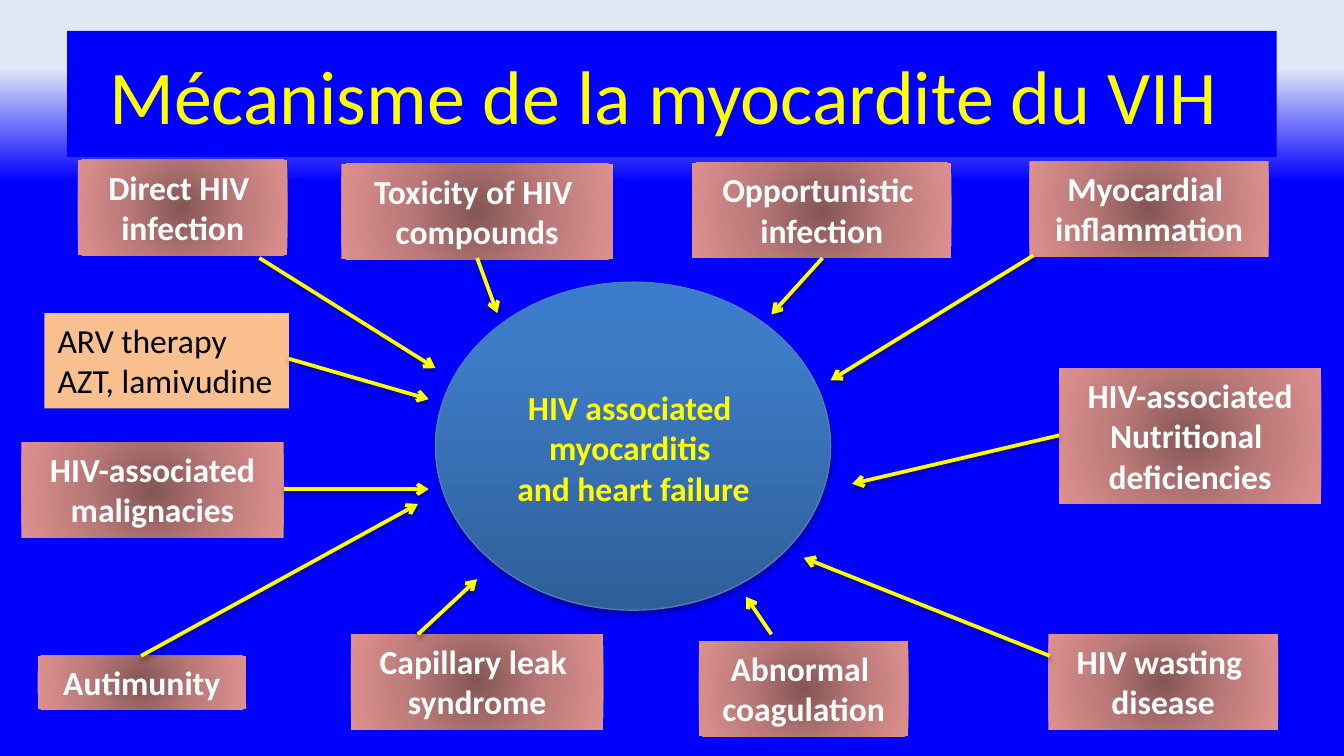
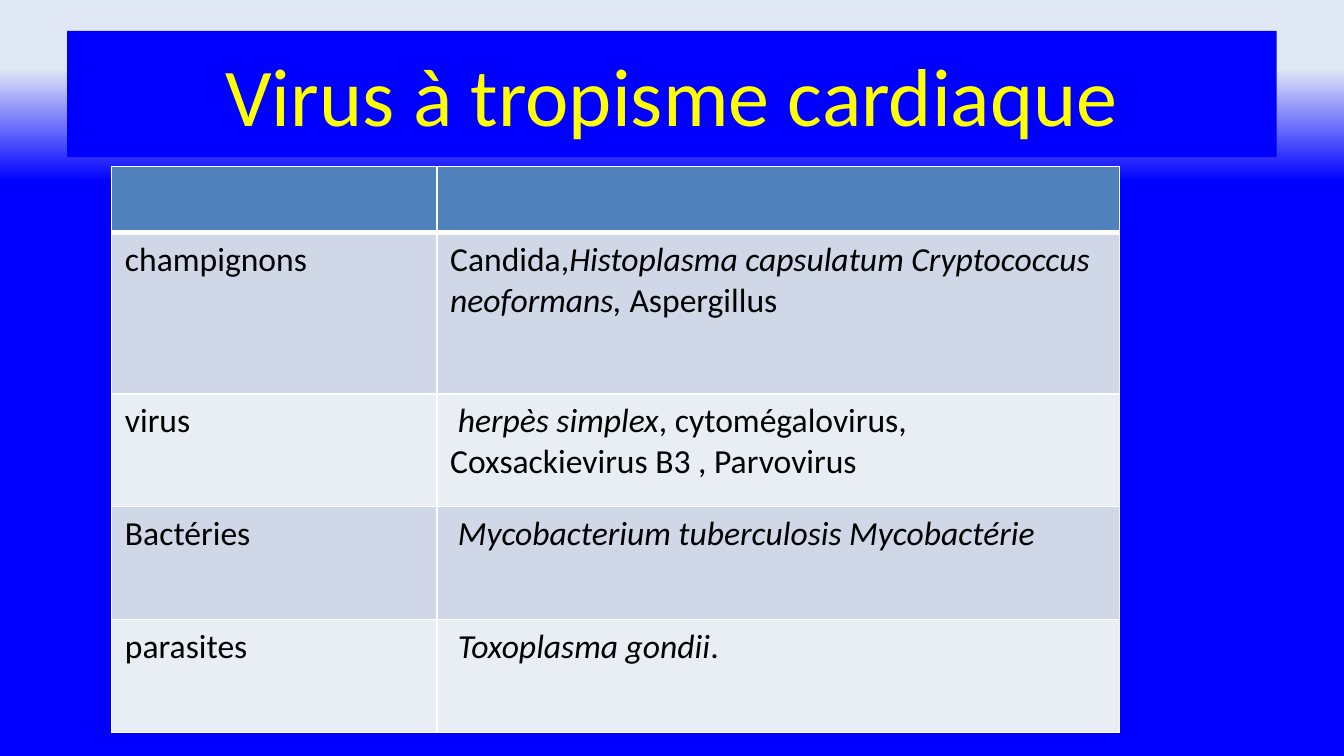
import pptx
import pptx.util
import pptx.oxml
import pptx.oxml.ns
import pptx.dml.color
import pptx.enum.shapes
import pptx.enum.text

RGB = pptx.dml.color.RGBColor
BLUE = RGB(0x00, 0x00, 0xFF)
PALE = RGB(0xE1, 0xE8, 0xF5)
GOLD = RGB(0xFF, 0xFF, 0x00)
WHITE = RGB(0xFF, 0xFF, 0xFF)
BLACK = RGB(0x00, 0x00, 0x00)
PEACH = RGB(0xFA, 0xC0, 0x90)
EDGE = RGB(0x4B, 0x7E, 0xBC)
HEAD = RGB(0x4F, 0x81, 0xBD)
BANDS = (RGB(0xE9, 0xED, 0xF4), RGB(0xD0, 0xD8, 0xE8))
SKY = ((9, PALE), (24, BLUE))
ROSE = ((0, RGB(0x84, 0x56, 0x55)), (50, RGB(0xBB, 0x7A, 0x79)), (100, RGB(0xDE, 0x91, 0x8F)))
STEEL = ((0, RGB(0x2F, 0x5F, 0x99)), (80, RGB(0x3D, 0x7C, 0xC7)), (100, RGB(0x3A, 0x7C, 0xCB)))

FONT = "Calibri"
SCALE = 9144
WIDE = 1000
TITLE = (50, 23, 900, 94)
CHART = (0, 100, 1000, 462)
GRID = (83, 124, 750, 421)

ALIGN = pptx.enum.text.PP_ALIGN
ANCHOR = pptx.enum.text.MSO_ANCHOR
NONE = pptx.enum.text.MSO_AUTO_SIZE.NONE
NS = pptx.oxml.ns.nsdecls("a")

HUB = (324, 110, 294, 244)
CORE = (370, 183, 203)
CORE_TEXT = "HIV associated \nmyocarditis \nand heart failure"
CAUSES = (
    ("HIV-associated\nNutritional \ndeficiencies", (788, 174, 195), (788, 224), (634, 260)),
    ("HIV-associated\nmalignacies", (16, 229, 195), (211, 264), (319, 264)),
    ("Autimunity", (28, 388, 155), (105, 388), (311, 275)),
    ("Capillary leak \nsyndrome", (261, 372, 188), (311, 372), (355, 331)),
    ("Abnormal \ncoagulation", (520, 377, 156), (574, 372), (555, 344)),
    ("HIV wasting \ndisease", (780, 372, 171), (781, 388), (598, 315)),
    ("Direct HIV \ninfection", (58, 19, 156), (193, 92), (324, 174)),
    ("Toxicity of HIV \ncompounds", (254, 22, 202), (355, 92), (370, 133)),
    ("Myocardial \ninflammation", (766, 20, 178), (769, 90), (618, 183)),
    ("Opportunistic \ninfection", (515, 21, 193), (612, 92), (574, 134)),
)
DRUG = ("ARV therapy\nAZT, lamivudine", (33, 133, 182), (215, 167), (319, 197))

COLS = (242, 508)
ROWS = (49, 120, 84, 84, 84)
GERMS = (
    ("", ""),
    ("champignons", "Candida,*Histoplasma capsulatum Cryptococcus neoformans, *Aspergillus "),
    ("virus", " *herpès simplex*, cytomégalovirus, Coxsackievirus B3 , Parvovirus"),
    ("Bactéries", " *Mycobacterium tuberculosis Mycobactérie"),
    ("parasites", " *Toxoplasma gondii*."),
)


def emu(*nums):
    return [pptx.util.Emu(n * SCALE) for n in nums]


def shift(box, x, y):
    return box[0] + x, box[1] + y


def blend(fill, root, stops, angle=None):
    fill.gradient()
    grad = root.find(".//" + pptx.oxml.ns.qn("a:gradFill"))
    marks = "".join(
        f'<a:gs pos="{pos * 1000}"><a:srgbClr val="{tone}"/></a:gs>' for pos, tone in stops)
    if angle is None:
        way = ('<a:path path="circle"><a:fillToRect l="50000" t="50000" '
               'r="50000" b="50000"/></a:path>')
    else:
        way = f'<a:lin ang="{angle * 60000}" scaled="0"/>'
    fresh = pptx.oxml.parse_xml(
        f'<a:gradFill {NS} rotWithShape="1"><a:gsLst>{marks}</a:gsLst>{way}</a:gradFill>')
    grad.getparent().replace(grad, fresh)


def shade(shape, alpha, dist):
    shape._element.spPr.append(pptx.oxml.parse_xml(
        f'<a:effectLst {NS}><a:outerShdw blurRad="{round(3.1 * 12700)}" '
        f'dist="{round(dist * 12700)}" dir="5400000" rotWithShape="0">'
        f'<a:srgbClr val="{BLACK}"><a:alpha val="{alpha * 1000}"/></a:srgbClr>'
        f'</a:outerShdw></a:effectLst>'))


def style(frame, size, tone, align, bold=False):
    for para in frame.paragraphs:
        para.alignment = align
        for run in para.runs:
            run.font.name = FONT
            run.font.size = pptx.util.Pt(size)
            run.font.bold = bold
            run.font.color.rgb = tone


def title(slide, box, text, size):
    shape = slide.shapes.title
    shape.left, shape.top, shape.width, shape.height = emu(*box)
    shape.fill.solid()
    shape.fill.fore_color.rgb = BLUE
    frame = shape.text_frame
    frame.text = text
    frame.auto_size = NONE
    frame.word_wrap = True
    frame.vertical_anchor = ANCHOR.MIDDLE
    style(frame, size, GOLD, ALIGN.CENTER)


def label(slide, box, text, place, tone, align=ALIGN.CENTER, bold=True):
    x, y, width = place
    lines = text.count("\n") + 1
    high = 10 + 61 * lines // 2
    shape = slide.shapes.add_textbox(*emu(*shift(box, x, y), width, high))
    frame = shape.text_frame
    frame.text = text
    frame.word_wrap = False
    style(frame, 18, tone, align, bold)
    return shape


def arrow(slide, box, start, tip):
    line = slide.shapes.add_connector(
        pptx.enum.shapes.MSO_CONNECTOR.STRAIGHT,
        *emu(*shift(box, *start), *shift(box, *tip)))
    line.line.color.rgb = GOLD
    line.line.width = pptx.util.Pt(2)
    line.line._get_or_add_ln().append(pptx.oxml.parse_xml(f'<a:tailEnd {NS} type="arrow"/>'))
    shade(line, 38, 1.6)


def hub(slide, box):
    x, y, width, high = HUB
    oval = slide.shapes.add_shape(
        pptx.enum.shapes.MSO_SHAPE.OVAL, *emu(*shift(box, x, y), width, high))
    blend(oval.fill, oval._element, STEEL, 270)
    oval.line.color.rgb = EDGE
    oval.line.width = pptx.util.Pt(0.75)
    shade(oval, 35, 1.8)
    label(slide, box, CORE_TEXT, CORE, GOLD)


def causes(slide, box):
    hub(slide, box)
    for text, place, start, tip in CAUSES:
        shape = label(slide, box, text, place, WHITE)
        blend(shape.fill, shape._element, ROSE)
        arrow(slide, box, start, tip)
    text, place, start, tip = DRUG
    shape = label(slide, box, text, place, BLACK, ALIGN.LEFT, False)
    shape.fill.solid()
    shape.fill.fore_color.rgb = PEACH
    arrow(slide, box, start, tip)


def border(cell, row):
    props = cell._tc.get_or_add_tcPr()
    thick = {"T": 3 if row == 1 else 1, "B": 3 if row == 0 else 1}
    for spot, side in enumerate("LRTB"):
        width = thick.get(side, 1) * 12700
        props.insert(spot, pptx.oxml.parse_xml(
            f'<a:ln{side} {NS} w="{width}"><a:solidFill><a:srgbClr val="{WHITE}"/>'
            f'</a:solidFill></a:ln{side}>'))


def germs(slide, box):
    table = slide.shapes.add_table(len(ROWS), len(COLS), *emu(*box)).table
    table.first_row = table.horz_banding = False
    for col, width in zip(table.columns, emu(*COLS)):
        col.width = width
    for row, high in zip(table.rows, emu(*ROWS)):
        row.height = high
    for r, texts in enumerate(GERMS):
        for c, text in enumerate(texts):
            cell = table.cell(r, c)
            cell.fill.solid()
            cell.fill.fore_color.rgb = BANDS[r % 2] if r else HEAD
            border(cell, r)
            para = cell.text_frame.paragraphs[0]
            for turn, part in enumerate(text.split("*")):
                if part:
                    run = para.add_run()
                    run.text = part
                    run.font.italic = turn % 2 == 1
            style(cell.text_frame, 18, BLACK, ALIGN.LEFT)


def main():
    deck = pptx.Presentation()
    deck.slide_width = emu(WIDE)[0]
    deck.slide_height = pptx.util.Emu(deck.slide_width * 9 // 16)
    base = deck.slide_master
    blend(base.background.fill, base._element.cSld, SKY, 90)
    plain = deck.slide_layouts.get_by_name("Title Only")
    slide = deck.slides.add_slide(plain)
    title(slide, TITLE, "Mécanisme de la myocardite du VIH ", 40.7)
    causes(slide, CHART)
    slide = deck.slides.add_slide(plain)
    title(slide, TITLE, "Virus à tropisme cardiaque", 44)
    germs(slide, GRID)
    deck.save("out.pptx")


if __name__ == "__main__":
    main()
